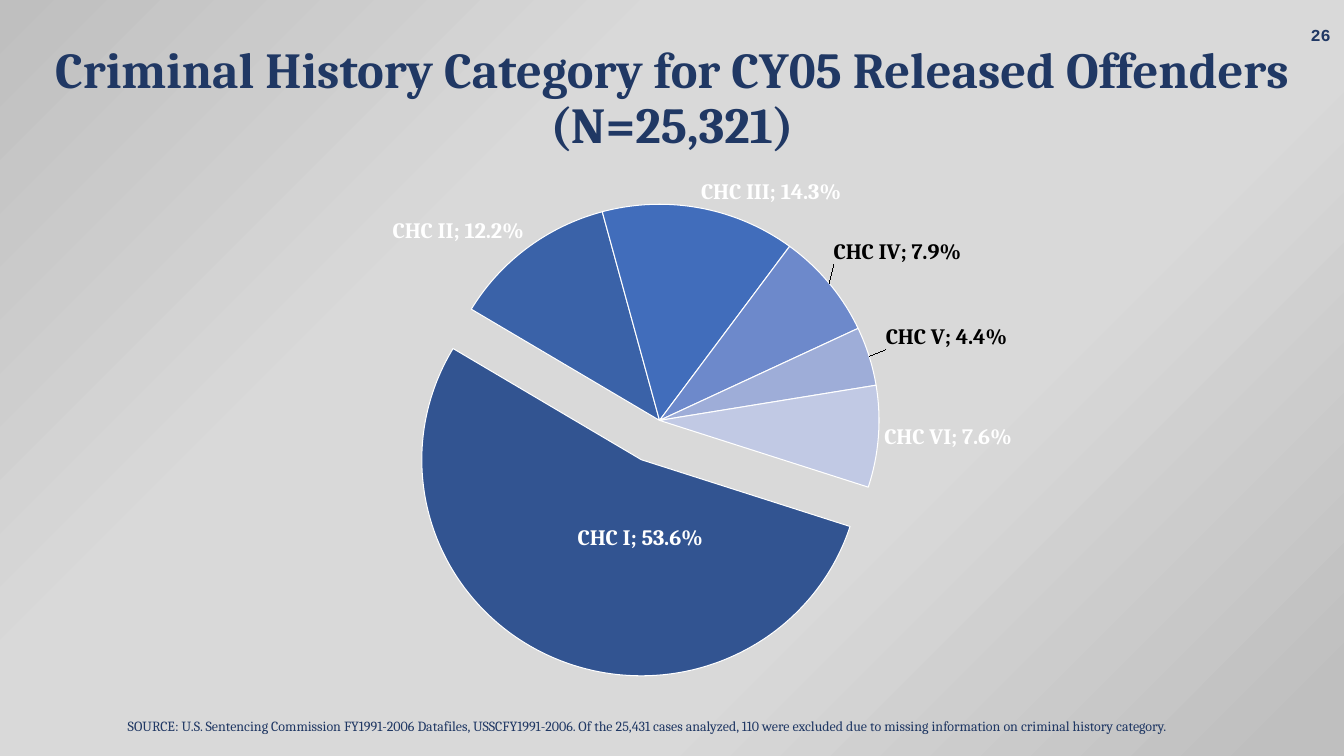
from dataclasses import dataclass

from lxml import etree
from pptx import Presentation
from pptx import util as u
from pptx.chart import data as chart_data
from pptx.dml import color
from pptx.enum import chart as chart_kinds, text
from pptx.oxml import ns


@dataclass(frozen=True)
class Theme:
    navy: str = "203864"
    white: str = "FFFFFF"
    black: str = "000000"
    edge_grey: str = "BFBFBF"
    middle_grey: str = "D9D9D9"
    slices: tuple = ("325491", "3A62A8", "416DBB", "6D89CB", "9EADD8", "C1C9E4")
    serif: str = "Cambria"
    mono: str = "Courier New"
    title_size: int = 36
    label_size: int = 16
    number_size: int = 12
    source_size: int = 10


THEME = Theme()
CATEGORIES = ("CHC I", "CHC II", "CHC III", "CHC IV", "CHC V", "CHC VI")
SHARES = (0.536, 0.122, 0.143, 0.079, 0.044, 0.076)
START_ANGLE = 108
EXPLOSION = 20
# Moved labels: slice index -> (x shift, y shift, colour, position)
POSITIONS = chart_kinds.XL_LABEL_POSITION
MOVED_LABELS = {
    0: (0.04, -0.04, THEME.white, POSITIONS.CENTER),
    3: (0, -0.03, THEME.black, POSITIONS.OUTSIDE_END),
    4: (0.01, -0.01, THEME.black, POSITIONS.OUTSIDE_END),
}


def style_font(font, size, rgb, name=THEME.serif, bold=False):
    font.name, font.size, font.bold = name, u.Pt(size), bold
    font.color.rgb = color.RGBColor.from_string(rgb)


def add_text(page, box, lines, size, align, anchor, name=THEME.serif,
             bold=False, spacing=None):
    """Add one paragraph of text, with a line break between lines."""
    frame = page.shapes.add_textbox(*map(u.Pt, box)).text_frame
    frame.word_wrap, frame.vertical_anchor = True, anchor
    para = frame.paragraphs[0]
    para.alignment, para.line_spacing = align, spacing
    for index, line in enumerate(lines):
        if index:
            para.add_line_break()
        span = para.add_run()
        span.text = line
        style_font(span.font, size, THEME.navy, name, bold)


def chart_element(tag, **attributes):
    return etree.Element(ns.qn(f"c:{tag}"), attributes)


def manual_layout(**settings):
    layout = chart_element("layout")
    manual = etree.SubElement(layout, ns.qn("c:manualLayout"))
    for tag, value in settings.items():
        etree.SubElement(manual, ns.qn(f"c:{tag}"), val=str(value))
    return layout


def add_background(page):
    """Shade the page from its top left corner."""
    page.background.fill.gradient()
    gradient = next(page.background._cSld.iter(ns.qn("a:gradFill")))
    for child in list(gradient):
        gradient.remove(child)
    stops = etree.SubElement(gradient, ns.qn("a:gsLst"))
    for percent, rgb in ((0, THEME.edge_grey), (33, THEME.middle_grey),
                         (66, THEME.middle_grey), (97, THEME.edge_grey)):
        stop = etree.SubElement(stops, ns.qn("a:gs"), pos=str(percent * 1000))
        etree.SubElement(stop, ns.qn("a:srgbClr"), val=rgb)
    shade = etree.SubElement(gradient, ns.qn("a:path"), path="circle")
    etree.SubElement(shade, ns.qn("a:fillToRect"), r="100000", b="100000")


def add_header(page, box):
    """Page number in the top right corner, title across the width."""
    left, top, width, height = box
    add_text(page, (left + width - 218.4, top + 10.8, 216, 28.8), ["26"],
             THEME.number_size, text.PP_ALIGN.RIGHT, text.MSO_ANCHOR.MIDDLE,
             THEME.mono, True)
    add_text(page, (left, top + 28.8, width, height - 28.8),
             ["Criminal History Category for CY05 Released Offenders", "(N=25,321)"],
             THEME.title_size, text.PP_ALIGN.CENTER, text.MSO_ANCHOR.TOP,
             bold=True, spacing=0.9)


def color_slices(series):
    for index, rgb in enumerate(THEME.slices):
        look = series.points[index].format
        look.fill.solid()
        look.fill.fore_color.rgb = color.RGBColor.from_string(rgb)
        look.line.color.rgb = color.RGBColor.from_string(THEME.white)
        look.line.width = u.Pt(0.75)
    first_slice = series._element.find(ns.qn("c:dPt"))
    first_slice.find(ns.qn("c:spPr")).addprevious(
        chart_element("explosion", val=str(EXPLOSION)))


def label_slices(series):
    labels = series.data_labels
    labels.number_format, labels.number_format_is_linked = "0.0%", False
    labels.position = POSITIONS.OUTSIDE_END
    labels.show_value = labels.show_category_name = True
    style_font(labels.font, THEME.label_size, THEME.white, bold=True)
    for index, (shift_x, shift_y, rgb, position) in MOVED_LABELS.items():
        label = series.points[index].data_label
        style_font(label.font, THEME.label_size, rgb, bold=True)
        label.position = position
    # Place the moved labels
    for element in series._element.iter(ns.qn("c:dLbl")):
        index_element = element.find(ns.qn("c:idx"))
        shift_x, shift_y = MOVED_LABELS[int(index_element.get("val"))][:2]
        index_element.addnext(manual_layout(x=shift_x, y=shift_y))
        element.find(ns.qn("c:showCatName")).set("val", "1")
    # Separate category and value
    for element in list(series._element.iter(ns.qn("c:showBubbleSize"))):
        separator = chart_element("separator")
        separator.text = "; "
        element.addnext(separator)


def add_pie(page, box):
    content = chart_data.CategoryChartData(number_format="0.0%")
    content.categories = CATEGORIES
    content.add_series("Series 1", SHARES)
    chart = page.shapes.add_chart(chart_kinds.XL_CHART_TYPE.PIE,
                                  *map(u.Pt, box), content).chart
    chart.has_legend = chart.has_title = False
    style_font(chart.font, 10, THEME.black)
    plot = chart.plots[0]
    plot.vary_by_categories = True
    color_slices(plot.series[0])
    label_slices(plot.series[0])
    # Turn the pie and set its plot area
    pie = plot._element
    for old in pie.findall(ns.qn("c:firstSliceAng")):
        pie.remove(old)
    pie.append(chart_element("firstSliceAng", val=str(START_ANGLE)))
    area = pie.getparent()
    for old in area.findall(ns.qn("c:layout")):
        area.remove(old)
    area.insert(0, manual_layout(layoutTarget="inner", xMode="edge", yMode="edge",
                                 x=0.286, y=0.049, w=0.396, h=0.88))


def add_source(page, box):
    add_text(page, box,
             ["SOURCE: U.S. Sentencing Commission FY1991-2006 Datafiles, "
              "USSCFY1991-2006. Of the 25,431 cases analyzed, 110 were excluded "
              "due to missing information on criminal history category."],
             THEME.source_size, text.PP_ALIGN.LEFT, text.MSO_ANCHOR.BOTTOM,
             spacing=0.9)


def main():
    deck = Presentation()
    deck.slide_width, deck.slide_height = u.Pt(960), u.Pt(540)
    page = deck.slides.add_slide(deck.slide_layouts[6])
    add_background(page)
    add_header(page, (0, 0, 960, 123.8))
    add_pie(page, (87.8, 126.7, 792, 356.4))
    add_source(page, (84.2, 493.9, 799.2, 34.6))
    deck.save("out.pptx")


if __name__ == "__main__":
    main()
